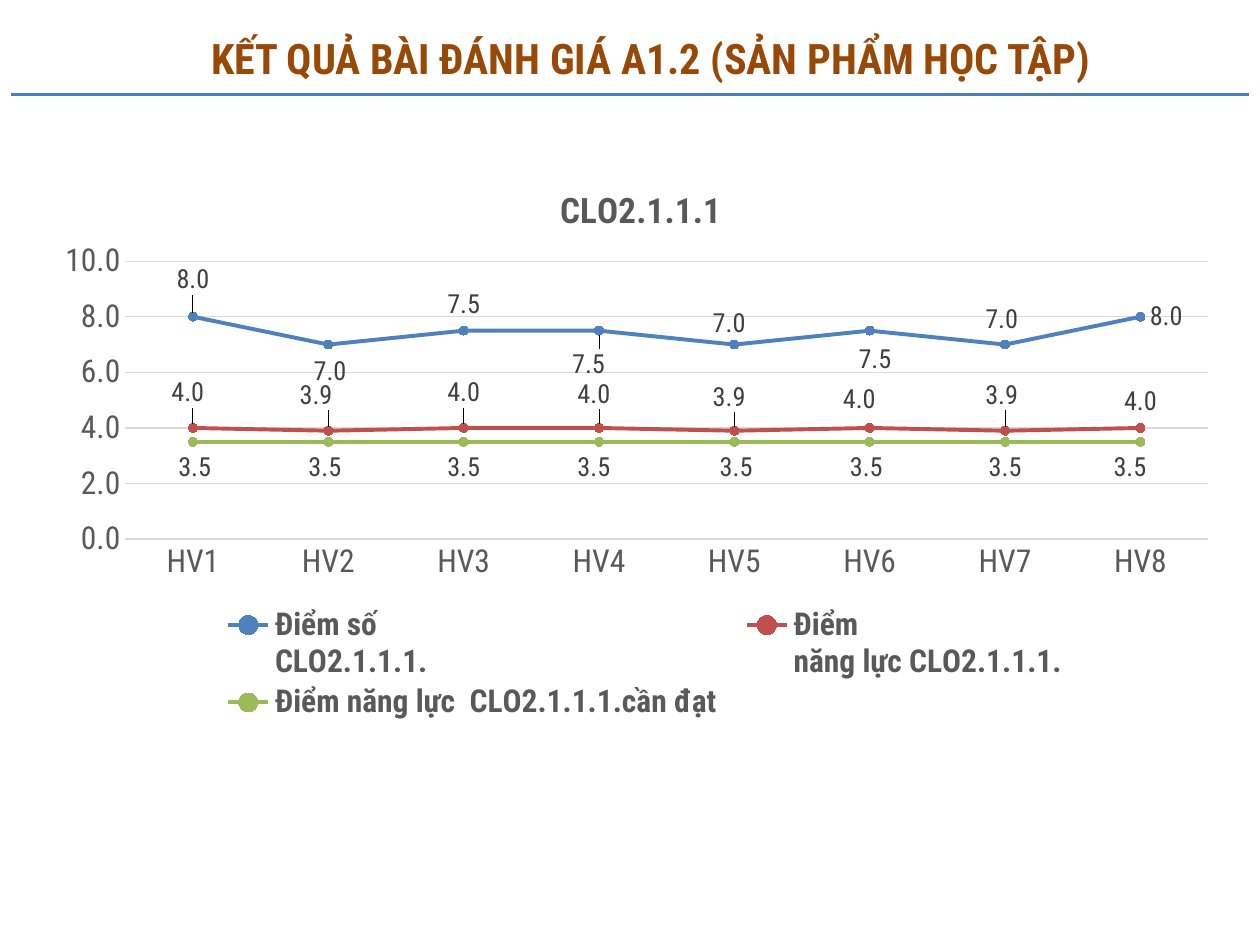
"""Build the slide showing learner scores for assessment A1.2."""
import pptx
import pptx.util
import pptx.chart.data
import pptx.dml.color
import pptx.enum.chart
import pptx.enum.shapes
import pptx.enum.text
import pptx.oxml
import pptx.oxml.ns

Pt = pptx.util.Pt
Pos = pptx.enum.chart.XL_LABEL_POSITION
theme = {
    "font": "Roboto Condensed",
    "title": ("984807", 24),
    "head": ("595959", 20),
    "axis": ("595959", 18),
    "label": ("404040", 15),
    "rule": "4B7EBC",
    "grid": "D9D9D9",
    "lines": ["4F81BD", "C0504D", "9BBB59"],
}
wide, high = 680, 331


def style(font, role, bold=False):
    color, size = theme[role]
    font.name, font.size, font.bold = theme["font"], Pt(size), bold
    font.color.rgb = pptx.dml.color.RGBColor.from_string(color)


def place(node, index, sizes, inner=False):
    for old in node.findall(pptx.oxml.ns.qn("c:layout")):
        node.remove(old)
    target = '<c:layoutTarget val="inner"/>' if inner else ""
    modes = "" if node.tag.endswith("dLbl") else '<c:xMode val="edge"/><c:yMode val="edge"/>'
    parts = "".join(f'<c:{key} val="{val:.4f}"/>' for key, val in zip("xywh", sizes))
    node.insert(index, pptx.oxml.parse_xml(
        f'<c:layout {pptx.oxml.ns.nsdecls("c")}><c:manualLayout>'
        f'{target}{modes}{parts}</c:manualLayout></c:layout>'))


deck = pptx.Presentation()
deck.slide_width, deck.slide_height = Pt(720), Pt(540)
slide = deck.slides.add_slide(deck.slide_layouts[5])

rule = slide.shapes.add_connector(
    pptx.enum.shapes.MSO_CONNECTOR.STRAIGHT, Pt(6.5), Pt(54), Pt(714), Pt(54))
rule.line.color.rgb = pptx.dml.color.RGBColor.from_string(theme["rule"])
rule.line.width = Pt(2)
rule.element.spPr.append(pptx.oxml.parse_xml(
    f'<a:effectLst {pptx.oxml.ns.nsdecls("a")}/>'))

title = slide.shapes.title
title.left, title.top, title.width, title.height = Pt(24), Pt(9), Pt(696), Pt(48)
frame = title.text_frame
frame.text = "KẾT QUẢ BÀI ĐÁNH GIÁ A1.2 (SẢN PHẨM HỌC TẬP)"
frame.vertical_anchor = pptx.enum.text.MSO_ANCHOR.MIDDLE
frame.paragraphs[0].alignment = pptx.enum.text.PP_ALIGN.CENTER
style(frame.paragraphs[0].runs[0].font, "title", True)

data = pptx.chart.data.CategoryChartData(number_format="0.0")
data.categories = [f"HV{num}" for num in range(1, 9)]
data.add_series("Điểm số \nCLO2.1.1.1.", [8, 7, 7.5, 7.5, 7, 7.5, 7, 8])
data.add_series("Điểm \nnăng lực CLO2.1.1.1. ", [4, 3.9, 4, 4, 3.9, 4, 3.9, 4])
data.add_series("Điểm năng lực  CLO2.1.1.1.cần đạt", [3.5] * 8)
chart = slide.shapes.add_chart(
    pptx.enum.chart.XL_CHART_TYPE.LINE_MARKERS,
    Pt(24), Pt(86.4), Pt(wide), Pt(high), data).chart
chart.font.name, chart.font.size = theme["font"], Pt(10)
chart.plots[0].vary_by_categories = False

chart.has_title = True
head = chart.chart_title.text_frame
head.text = "CLO2.1.1.1"
style(head.paragraphs[0].runs[0].font, "head", True)
chart.has_legend = True
chart.legend.position = pptx.enum.chart.XL_LEGEND_POSITION.BOTTOM
chart.legend.include_in_layout = False
style(chart.legend.font, "axis", True)

grid = pptx.dml.color.RGBColor.from_string(theme["grid"])
for axis in (chart.category_axis, chart.value_axis):
    axis.major_tick_mark = axis.minor_tick_mark = pptx.enum.chart.XL_TICK_MARK.NONE
    style(axis.tick_labels.font, "axis")
chart.category_axis.format.line.color.rgb = grid
chart.category_axis.format.line.width = Pt(0.75)
scale = chart.value_axis
scale.minimum_scale, scale.maximum_scale, scale.major_unit = 0, 10, 2
scale.tick_labels.number_format = "0.0"
scale.tick_labels.number_format_is_linked = False
scale.format.line.fill.background()
scale.major_gridlines.format.line.color.rgb = grid
scale.major_gridlines.format.line.width = Pt(0.75)

sides = [
    [Pos.ABOVE, Pos.BELOW] * 2 + [Pos.ABOVE, Pos.BELOW, Pos.ABOVE, Pos.RIGHT],
    [Pos.ABOVE] * 8,
    [Pos.BELOW] * 8,
]
shifts = [
    [(0, -7), (1, 1), (0, -1), (-6, 5), (-3, 2), (3, 2), (-2, 0), (0, 0)],
    [(-3, -6), (-7, -6), (0, -6), (-3, -5), (-3, -5), (-6, -2), (-2, -6), (0, -1)],
    [(1, 0), (-2, 0), (0, 0), (-3, 0), (1, 0), (-2, 0), (0, 0), (-6, 0)],
]
for line, color, spots in zip(chart.plots[0].series, theme["lines"], sides):
    tint = pptx.dml.color.RGBColor.from_string(color)
    line.smooth = False
    line.format.line.color.rgb = tint
    line.format.line.width = Pt(2.25)
    line.marker.style = pptx.enum.chart.XL_MARKER_STYLE.CIRCLE
    line.marker.size = 5
    line.marker.format.fill.solid()
    line.marker.format.fill.fore_color.rgb = tint
    line.marker.format.line.color.rgb = tint
    labels = line.data_labels
    labels.show_value = True
    labels.number_format, labels.number_format_is_linked = "0.0", False
    style(labels.font, "label")
    for num, spot in enumerate(spots):
        label = line.points[num].data_label
        style(label.font, "label")
        label.position = spot

moves = [move for row in shifts for move in row]
for node, (across, down) in zip(chart.element.xpath(".//c:dLbl"), moves):
    node.insert(1, pptx.oxml.parse_xml(
        f'<c:numFmt {pptx.oxml.ns.nsdecls("c")} formatCode="0.0" sourceLinked="0"/>'))
    if across or down:
        place(node, 1, (across / wide, down / high))

place(chart.element.xpath(".//c:plotArea")[0], 0, (0.07, 0.19, 0.91, 0.48), True)
place(chart.element.xpath("./c:chart/c:title")[0], 1, (0.43, 0.05))
place(chart.element.xpath(".//c:legend")[0], 1, (0.14, 0.78, 0.74, 0.21))

deck.save("out.pptx")
